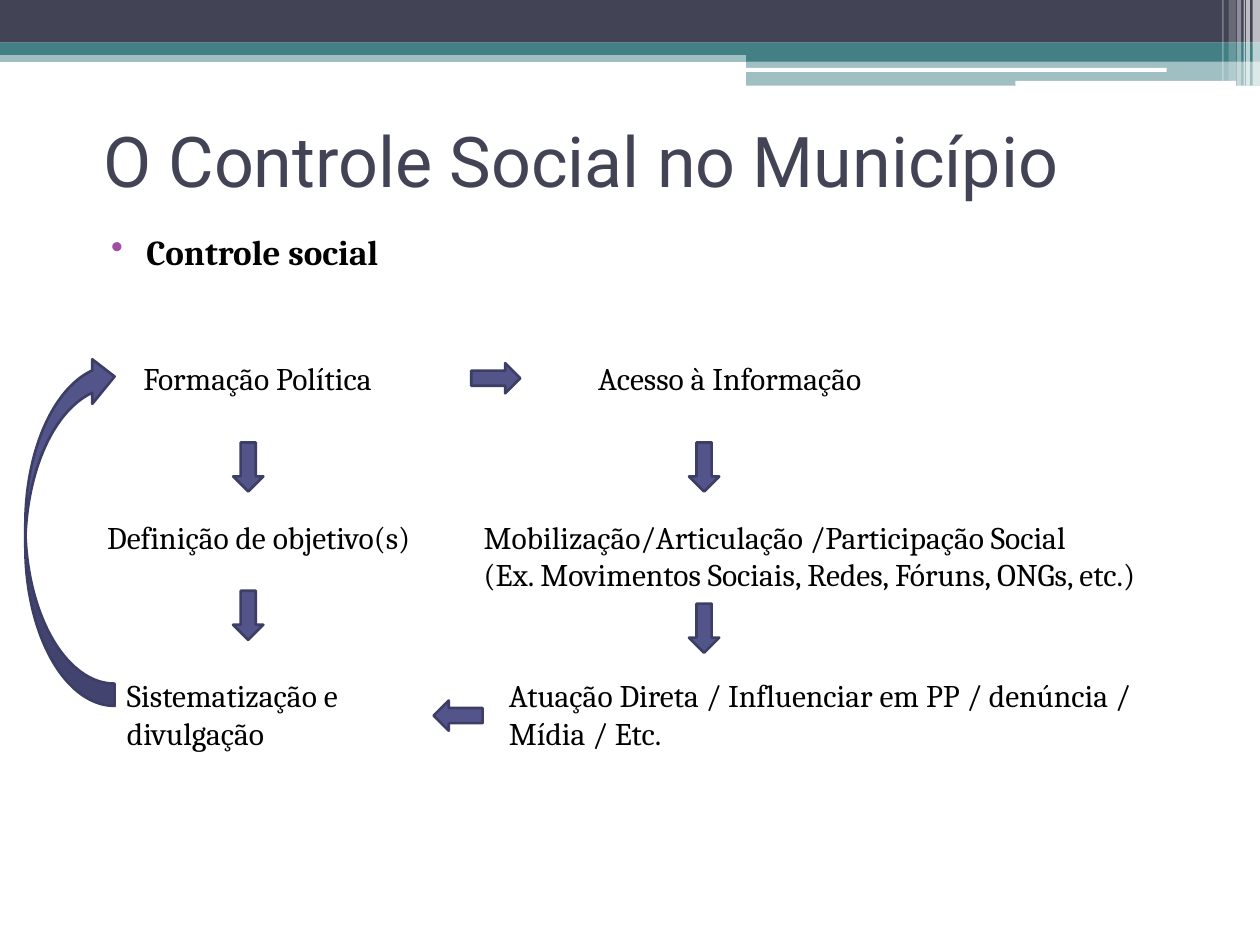
"""Build the slide on social control in the municipality."""
import pptx
import pptx.util
import pptx.dml.color
import pptx.enum.shapes
import pptx.enum.text
import pptx.oxml.ns
from lxml import etree

Cm, Pt = pptx.util.Cm, pptx.util.Pt
SHAPE = pptx.enum.shapes.MSO_SHAPE
ANCHOR = pptx.enum.text.MSO_ANCHOR
TEAL, SLATE, WHITE = "438086", "424456", "FFFFFF"

BANDS = [
    ((0, 1.02, 25.4, 0.23), SHAPE.RECTANGLE, TEAL, 50),
    ((0, 0, 25.4, 0.86), SHAPE.RECTANGLE, SLATE, 100),
    ((0, 0.86, 25.4, 0.25), SHAPE.RECTANGLE, TEAL, 100),
    ((15.04, 0.99, 10.36, 0.25), SHAPE.RECTANGLE, TEAL, 100),
    ((15.04, 1.22, 10.36, 0.51), SHAPE.RECTANGLE, TEAL, 50),
    ((15.01, 1.37, 8.51, 0.08), SHAPE.ROUNDED_RECTANGLE, WHITE, 100),
    ((20.47, 1.63, 4.45, 0.1), SHAPE.ROUNDED_RECTANGLE, WHITE, 100),
]
STRIPES = [
    (25.25, 0.15, 1.73, 65), (25.12, 0.08, 1.73, 65), (25.07, 0.03, 1.73, 60),
    (24.94, 0.08, 1.73, 40), (24.77, 0.15, 1.63, 20), (24.64, 0.03, 1.63, 30),
]
TITLE = ("O Controle Social no Município", (1.83, 1.73, 22.86, 2.97))
TOPIC = ("Controle social", (1.68, 4.52, 23.62, 1.3))
ROWS = (7.11, 10.31, 13.51)
STEPS = [
    (["Formação Política"], 2.64, 0, 6.5),
    (["Acesso à Informação"], 11.81, 0, 8),
    (["Definição de objetivo(s)"], 1.91, 1, 7.19),
    (["Mobilização/Articulação /Participação Social",
      "(Ex. Movimentos Sociais, Redes, Fóruns, ONGs, etc.)"], 9.5, 1, 15.8),
    (["Sistematização e divulgação"], 2.31, 2, 6.2),
    (["Atuação Direta / Influenciar em PP / denúncia / Mídia / Etc."], 10.01, 2, 14.71),
]
LONG, SHORT = 0.99, 0.61
LEFT_COL, RIGHT_COL = 4.7, 13.89
ARROWS = [
    ((9.5, 7.32, LONG, SHORT), SHAPE.RIGHT_ARROW, 0),
    ((8.74, 14.12, LONG, SHORT), SHAPE.RIGHT_ARROW, 180),
    ((0.51, 7.14, 1.8, 7.09), SHAPE.CURVED_LEFT_ARROW, 180),
] + [((x, y, SHORT, LONG), SHAPE.DOWN_ARROW, 0) for x, y in
     [(LEFT_COL, 8.92), (LEFT_COL, 11.91), (RIGHT_COL, 8.92), (RIGHT_COL, 12.17)]]


def rgb(value):
    """Return the colour for a hex string."""
    return pptx.dml.color.RGBColor.from_string(value)


def add_shape(s, box, kind, fill, alpha=100, line=None, rotation=0):
    """Add a filled shape with optional transparency and outline."""
    sp = s.shapes.add_shape(kind, *map(Cm, box))
    sp.shadow.inherit = False
    sp.rotation = rotation
    sp.fill.solid()
    sp.fill.fore_color.rgb = rgb(fill)
    if alpha < 100:
        clr = sp.fill._xPr.find(".//" + pptx.oxml.ns.qn("a:srgbClr"))
        etree.SubElement(clr, pptx.oxml.ns.qn("a:alpha"), val=str(alpha * 1000))
    if line:
        sp.line.color.rgb = rgb(line)
        sp.line.width = Pt(1.5)
    else:
        sp.line.fill.background()


def add_text(s, lines, box, color="000000", anchor=ANCHOR.TOP, **font):
    """Add a wrapped text box with one paragraph per line and return its frame."""
    tf = s.shapes.add_textbox(*map(Cm, box)).text_frame
    tf.word_wrap = True
    tf.vertical_anchor = anchor
    for i, line in enumerate(lines):
        p = tf.paragraphs[0] if i == 0 else tf.add_paragraph()
        r = p.add_run()
        r.text = line
        r.font.color.rgb = rgb(color)
        for key, value in {"name": "Cambria", "size": Pt(18), **font}.items():
            setattr(r.font, key, value)
    return tf


def add_bullet(p, color):
    """Give a paragraph a hanging coloured bullet."""
    p.space_before = Pt(3)
    pPr = p._p.get_or_add_pPr()
    pPr.set("marL", str(Cm(1.02)))
    pPr.set("indent", str(-Cm(0.71)))
    clr = etree.SubElement(pPr, pptx.oxml.ns.qn("a:buClr"))
    etree.SubElement(clr, pptx.oxml.ns.qn("a:srgbClr"), val=color)
    etree.SubElement(pPr, pptx.oxml.ns.qn("a:buChar"), char="•")


def main():
    """Draw the header, the texts and the arrows, then save."""
    prs = pptx.Presentation()
    prs.slide_width, prs.slide_height = Cm(25.4), Cm(19.05)
    s = prs.slides.add_slide(prs.slide_layouts[6])
    for box, kind, fill, alpha in BANDS:
        add_shape(s, box, kind, fill, alpha)
    for x, w, h, alpha in STRIPES:
        add_shape(s, (x, 0, w, h), SHAPE.RECTANGLE, WHITE, alpha)
    text, box = TITLE
    add_text(s, [text], box, SLATE, ANCHOR.MIDDLE, name="Roboto", size=Pt(40))
    text, box = TOPIC
    tf = add_text(s, [text], box, size=Pt(20), bold=True)
    add_bullet(tf.paragraphs[0], "A04DA3")
    for lines, x, row, w in STEPS:
        add_text(s, lines, (x, ROWS[row], w, 1.02 if row == 0 else 1.8))
    for box, kind, rotation in ARROWS:
        add_shape(s, box, kind, "53548A", line="3D3E66", rotation=rotation)
    prs.save("out.pptx")


if __name__ == "__main__":
    main()
